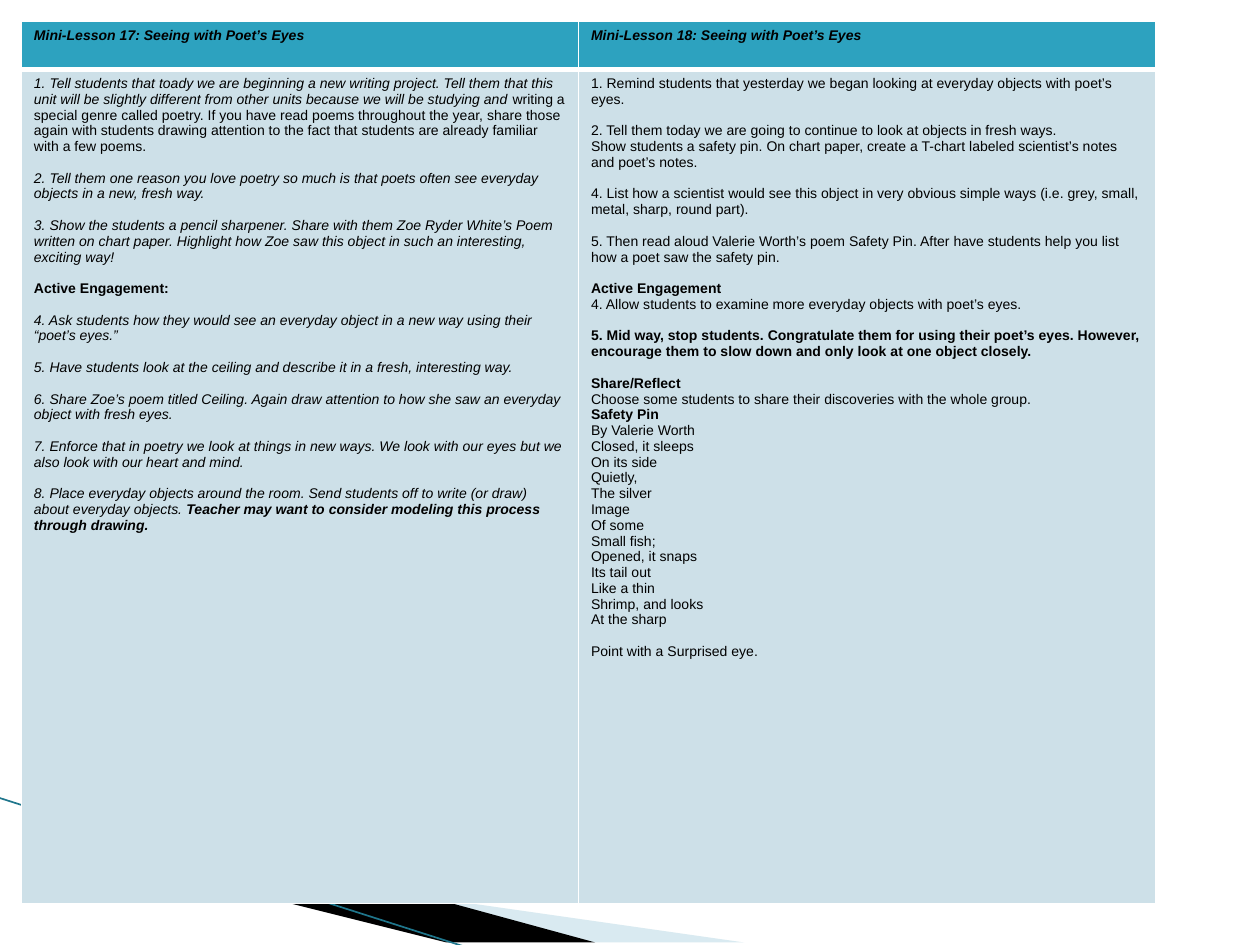
import pptx
import pptx.dml.color
import pptx.oxml
import pptx.oxml.ns
import pptx.util
from lxml import etree

Cm, Pt = pptx.util.Cm, pptx.util.Pt

THEME = {
    "font": "Arial", "size": Pt(8), "gap": Pt(9), "text": "000000",
    "header": "2DA2BF", "body": "CDE0E8", "border": "FFFFFF",
    "pale": "A0CBDC", "black": "000000", "line": "1F768C",
}

# Paragraphs: (blank line before?, (style, text), ...); style letters: b bold, i italic
HEADERS = [
    [(False, ("bi", "Mini-Lesson 17: Seeing with Poet’s Eyes"))],
    [(False, ("bi", "Mini-Lesson 18: Seeing with Poet’s Eyes"))],
]
LESSON_17 = [
    (False,
     ("i", "1. Tell students that toady we are beginning a new writing project. Tell them that "
           "this unit will be slightly different from other units because we will be studying and "),
     ("", "writing a special genre called poetry. If you have read poems throughout the year, "
          "share those again with students drawing attention to the fact that students are "
          "already familiar with a few poems.")),
    (True, ("i", "2. Tell them one reason you love poetry so much is that poets often see "
                 "everyday objects in a new, fresh way.")),
    (True, ("i", "3. Show the students a pencil sharpener. Share with them Zoe Ryder White’s Poem "
                 "written on chart paper. Highlight how Zoe saw this object in such an "
                 "interesting, exciting way!")),
    (True, ("b", "Active Engagement:")),
    (True, ("i", "4. Ask students how they would see an everyday object in a new way using their "
                 "“poet’s eyes.”")),
    (True, ("i", "5. Have students look at the ceiling and describe it in a fresh, "
                 "interesting way.")),
    (True, ("i", "6. Share Zoe’s poem titled Ceiling. Again draw attention to how she saw an "
                 "everyday object with fresh eyes.")),
    (True, ("i", "7. Enforce that in poetry we look at things in new ways. We look with our eyes "
                 "but we also look with our heart and mind.")),
    (True,
     ("i", "8. Place everyday objects around the room. Send students off to write (or draw) "
           "about everyday objects. "),
     ("bi", "Teacher may want to consider modeling this process through drawing.")),
]
POEM = ["By Valerie Worth", "Closed, it sleeps", "On its side", "Quietly,", "The silver",
        "Image", "Of some", "Small fish;", "Opened, it snaps", "Its tail out", "Like a thin",
        "Shrimp, and looks", "At the sharp"]
LESSON_18 = [
    (False, ("", "1. Remind students that yesterday we began looking at everyday objects with "
                 "poet’s eyes.")),
    (True, ("", "2. Tell them today we are going to continue to look at objects in fresh ways.")),
    (False, ("", "Show students a safety pin. On chart paper, create a T-chart labeled "
                 "scientist’s notes and poet’s notes.")),
    (True, ("", "4. List how a scientist would see this object in very obvious simple ways (i.e. "
                "grey, small, metal, sharp, round part).")),
    (True, ("", "5. Then read aloud Valerie Worth’s poem Safety Pin. After have students help you "
                "list how a poet saw the safety pin.")),
    (True, ("b", "Active Engagement")),
    (False, ("", "4. Allow students to examine more everyday objects with poet’s eyes.")),
    (True, ("b", "5. Mid way, stop students. Congratulate them for using their poet’s eyes. "
                 "However, encourage them to slow down and only look at one object closely.")),
    (True, ("b", "Share/Reflect")),
    (False, ("", "Choose some students to share their discoveries with the whole group.")),
    (False, ("b", "Safety Pin")),
    *[(False, ("", verse)) for verse in POEM],
    (True, ("", "Point with a Surprised eye.")),
]
ROWS = [HEADERS, [LESSON_17, LESSON_18]]

# Geometry in centimetres
TABLE_ORIGIN = 0.43
COLUMN_WIDTHS = [11.23, 11.63]
ROW_HEIGHTS = [0.97, 16.81]
WEDGES = [  # colour, opacity in percent, corners
    ("pale", 40, [(1.4, 16.54), (15.11, 19.08), (11.58, 19.08), (1.4, 16.51)]),
    ("black", 100, [(1.35, 16.48), (11.61, 19.08), (9.45, 19.1), (1.37, 16.51)]),
]
SWEEP = [(-0.03, 16.08), (9.42, 19.1)]


def color(name):
    return pptx.dml.color.RGBColor.from_string(THEME[name])


def add_wedge(page, name, opacity, corners):
    builder = page.shapes.build_freeform(*corners[0], scale=Cm(1))
    builder.add_line_segments(corners[1:], close=True)
    wedge = builder.convert_to_shape()
    wedge.shadow.inherit = False
    wedge.fill.solid()
    wedge.fill.fore_color.rgb = color(name)
    wedge.line.fill.background()
    if opacity < 100:
        tint = wedge.fill._xPr.find(".//" + pptx.oxml.ns.qn("a:srgbClr"))
        etree.SubElement(tint, pptx.oxml.ns.qn("a:alpha"), val=str(opacity * 1000))


def add_sweep(page):
    (left, top), (right, bottom) = SWEEP
    sweep = page.shapes.add_connector(1, Cm(left), Cm(top), Cm(right), Cm(bottom))
    sweep.line.color.rgb = color("line")
    sweep.line.width = Pt(0.95)
    etree.SubElement(sweep._element.spPr, pptx.oxml.ns.qn("a:effectLst"))


def set_borders(cell, widths):
    properties = cell._tc.get_or_add_tcPr()
    for side, width in zip("LRTB", widths):
        properties.append(pptx.oxml.parse_xml(
            f'<a:ln{side} {pptx.oxml.ns.nsdecls("a")} w="{Pt(width)}"><a:solidFill>'
            f'<a:srgbClr val="{THEME["border"]}"/></a:solidFill></a:ln{side}>'))


def set_style(font, style):
    font.bold = "b" in style
    font.italic = "i" in style


def write(frame, paragraphs):
    for index, (gap, *spans) in enumerate(paragraphs):
        para = frame.paragraphs[0] if index == 0 else frame.add_paragraph()
        if gap:
            para.space_before = THEME["gap"]
        para.font.name = THEME["font"]
        para.font.size = THEME["size"]
        para.font.color.rgb = color("text")
        if len(spans) == 1:
            set_style(para.font, spans[0][0])
        for style, text in spans:
            span = para.add_run()
            span.text = text
            if len(spans) > 1:
                set_style(span.font, style)


def add_lessons(page):
    frame = page.shapes.add_table(len(ROWS), len(COLUMN_WIDTHS), Cm(TABLE_ORIGIN),
                                  Cm(TABLE_ORIGIN), Cm(sum(COLUMN_WIDTHS)), Cm(sum(ROW_HEIGHTS)))
    table = frame.table
    for column, width in zip(table.columns, COLUMN_WIDTHS):
        column.width = Cm(width)
    for row, height in zip(table.rows, ROW_HEIGHTS):
        row.height = Cm(height)
    for row_index, contents in enumerate(ROWS):
        for column_index, paragraphs in enumerate(contents):
            cell = table.cell(row_index, column_index)
            is_header = row_index == 0
            set_borders(cell, (1, 1, 1, 3) if is_header else (1, 1, 3, 1))
            cell.fill.solid()
            cell.fill.fore_color.rgb = color("header" if is_header else "body")
            write(cell.text_frame, paragraphs)


def main():
    deck = pptx.Presentation()
    deck.slide_width, deck.slide_height = Cm(25.4), Cm(19.05)
    page = deck.slides.add_slide(deck.slide_layouts[6])
    # Decoration behind the table
    for wedge in WEDGES:
        add_wedge(page, *wedge)
    add_sweep(page)
    # Lesson plans
    add_lessons(page)
    deck.save("out.pptx")


if __name__ == "__main__":
    main()
